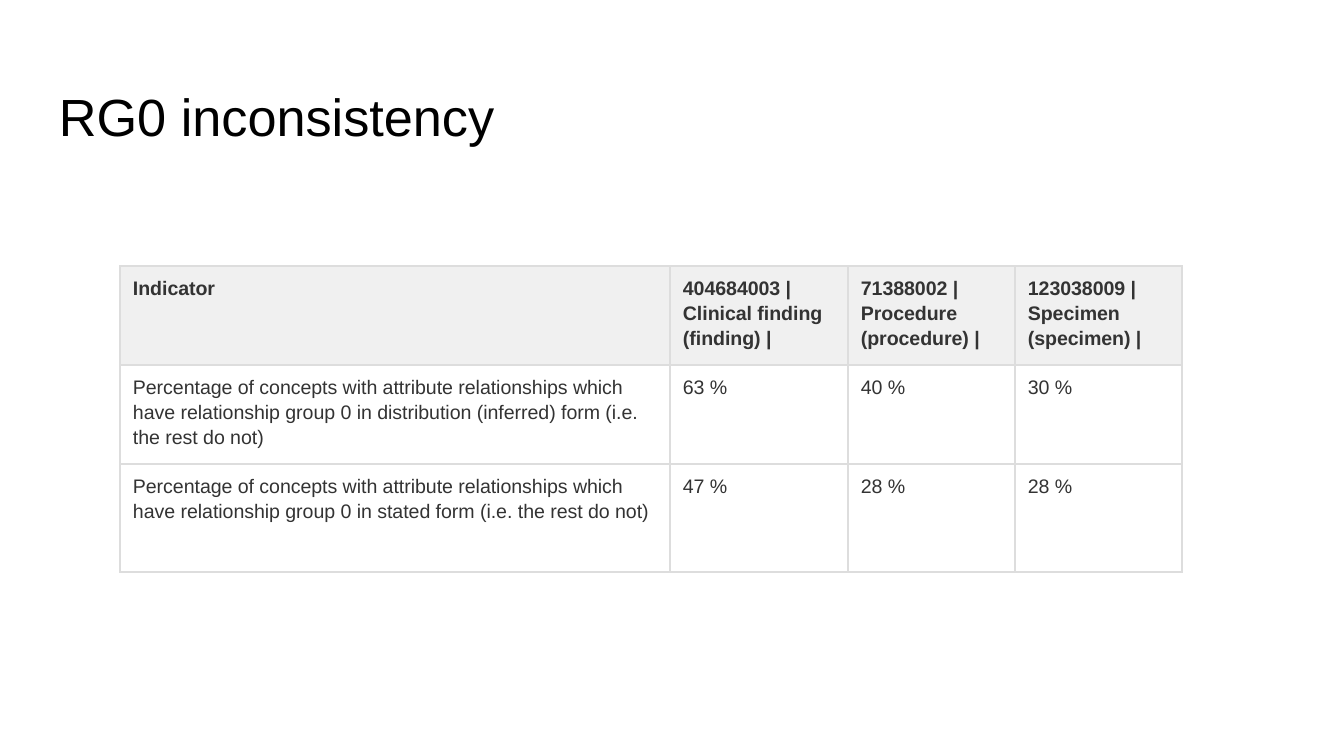
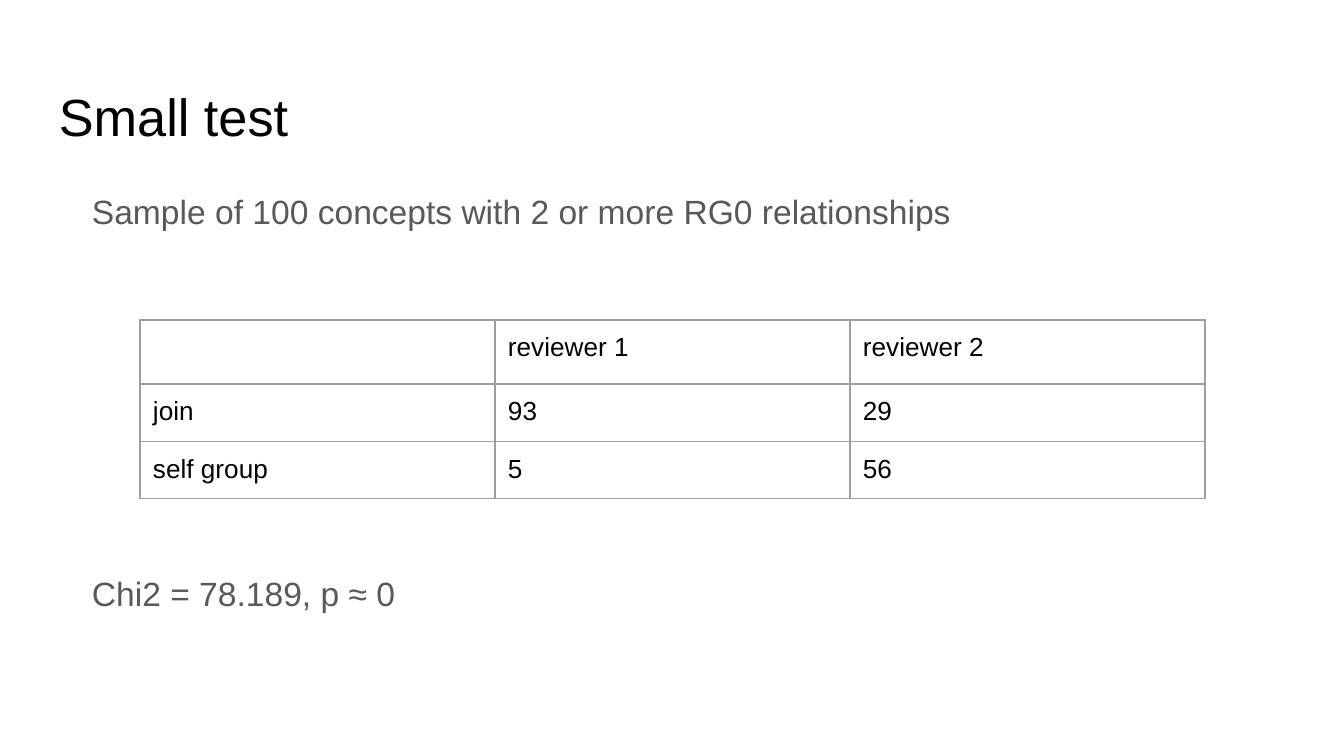
from dataclasses import dataclass

from lxml import etree
from pptx import Presentation
from pptx.dml.color import RGBColor
from pptx.enum.text import MSO_ANCHOR
from pptx.oxml.ns import qn
from pptx.util import Pt

TOP = MSO_ANCHOR.TOP
SCALE = 914400 / 134.4


@dataclass(frozen=True)
class Theme:
    face: str = "Arial"
    ink: str = "000000"
    body: str = "595959"
    dark: str = "333333"
    head: str = "F0F0F0"
    pale: str = "DDDDDD"
    grey: str = "9E9E9E"
    title_size: float = 28
    body_size: float = 18
    cell_size: float = 14
    small_size: float = 10.5
    edge: float = 0.75


THEME = Theme()

TITLE_BOX = (46, 66, 1253, 85)
BODY_BOX = (46, 169, 1253, 503)
INSET = 13

SLIDES = [
    {
        "title": "RG0 inconsistency",
        "notes": [],
        "table": {
            "at": (120, 266),
            "cols": [550, 178, 167, 167],
            "rows": [95, 94, 108],
            "pad": 9,
            "size": THEME.small_size,
            "color": THEME.dark,
            "edge": THEME.pale,
            "head": THEME.head,
            "lines": 1.15,
            "before": 8,
            "cells": [
                ("Indicator", "404684003 | Clinical finding (finding) |",
                 "71388002 | Procedure (procedure) |",
                 "123038009 | Specimen (specimen) |"),
                ("Percentage of concepts with attribute relationships which have "
                 "relationship group 0 in distribution (inferred) form "
                 "(i.e. the rest do not)", "63 %", "40 %", "30 %"),
                ("Percentage of concepts with attribute relationships which have "
                 "relationship group 0 in stated form (i.e. the rest do not)",
                 "47 %", "28 %", "28 %"),
            ],
        },
    },
    {
        "title": "Small test",
        "notes": [
            ("Sample of 100 concepts with 2 or more RG0 relationships", 0),
            ("Chi2 = 78.189, p ≈ 0", 164),
        ],
        "table": {
            "at": (140, 320),
            "cols": [355] * 3,
            "rows": [64, 56, 56],
            "pad": INSET,
            "size": THEME.cell_size,
            "color": THEME.ink,
            "edge": THEME.grey,
            "head": None,
            "lines": 1.0,
            "before": 0,
            "cells": [
                ("", "reviewer 1", "reviewer 2"),
                ("join", "93", "29"),
                ("self group", "5", "56"),
            ],
        },
    },
]


def px(n):
    return round(n * SCALE)


def style(para, size, color, bold=False):
    font = para.font
    font.name = THEME.face
    font.size = Pt(size)
    font.bold = bold
    font.color.rgb = RGBColor.from_string(color)


def add_box(slide, box, top):
    frame = slide.shapes.add_textbox(*map(px, box)).text_frame
    frame.word_wrap = True
    frame.vertical_anchor = TOP
    frame.margin_left = frame.margin_right = frame.margin_bottom = px(INSET)
    frame.margin_top = px(top)
    return frame


def add_title(slide, text):
    para = add_box(slide, TITLE_BOX, 18).paragraphs[0]
    para.text = text
    style(para, THEME.title_size, THEME.ink)


def add_notes(slide, notes):
    frame = add_box(slide, BODY_BOX, 16)
    for i, (text, gap) in enumerate(notes):
        para = frame.add_paragraph() if i else frame.paragraphs[0]
        para.text = text
        para.line_spacing = 1.15
        para.space_before = Pt(gap)
        para.space_after = Pt(16)
        style(para, THEME.body_size, THEME.body)
        props = para._p.get_or_add_pPr()
        props.set("marL", str(px(67)))
        props.set("indent", str(px(-34)))


def add_edges(cell, color):
    props = cell._tc.get_or_add_tcPr()
    for side in ("lnL", "lnR", "lnT", "lnB"):
        line = etree.SubElement(props, qn(f"a:{side}"), w=str(Pt(THEME.edge)))
        fill = etree.SubElement(line, qn("a:solidFill"))
        etree.SubElement(fill, qn("a:srgbClr"), val=color)


def fill_cell(cell, text, data, head):
    cell.margin_left = cell.margin_right = px(INSET)
    cell.margin_top = cell.margin_bottom = px(data["pad"])
    cell.vertical_anchor = TOP
    para = cell.text_frame.paragraphs[0]
    para.text = text
    para.line_spacing = data["lines"]
    para.space_before = Pt(data["before"])
    style(para, data["size"], data["color"], head)
    add_edges(cell, data["edge"])
    if head:
        cell.fill.solid()
        cell.fill.fore_color.rgb = RGBColor.from_string(data["head"])
    else:
        cell.fill.background()


def add_grid(slide, data):
    cols, rows = data["cols"], data["rows"]
    box = (*data["at"], sum(cols), sum(rows))
    table = slide.shapes.add_table(len(rows), len(cols), *map(px, box)).table
    table.first_row = table.horz_banding = False
    for col, width in zip(table.columns, cols):
        col.width = px(width)
    for row, height in zip(table.rows, rows):
        row.height = px(height)
    for r, texts in enumerate(data["cells"]):
        for c, text in enumerate(texts):
            head = r == 0 and data["head"] is not None
            fill_cell(table.cell(r, c), text, data, head)


def main():
    deck = Presentation()
    deck.slide_width, deck.slide_height = px(1344), px(756)
    for data in SLIDES:
        slide = deck.slides.add_slide(deck.slide_layouts[6])
        add_title(slide, data["title"])
        if data["notes"]:
            add_notes(slide, data["notes"])
        add_grid(slide, data["table"])
    deck.save("out.pptx")


if __name__ == "__main__":
    main()
